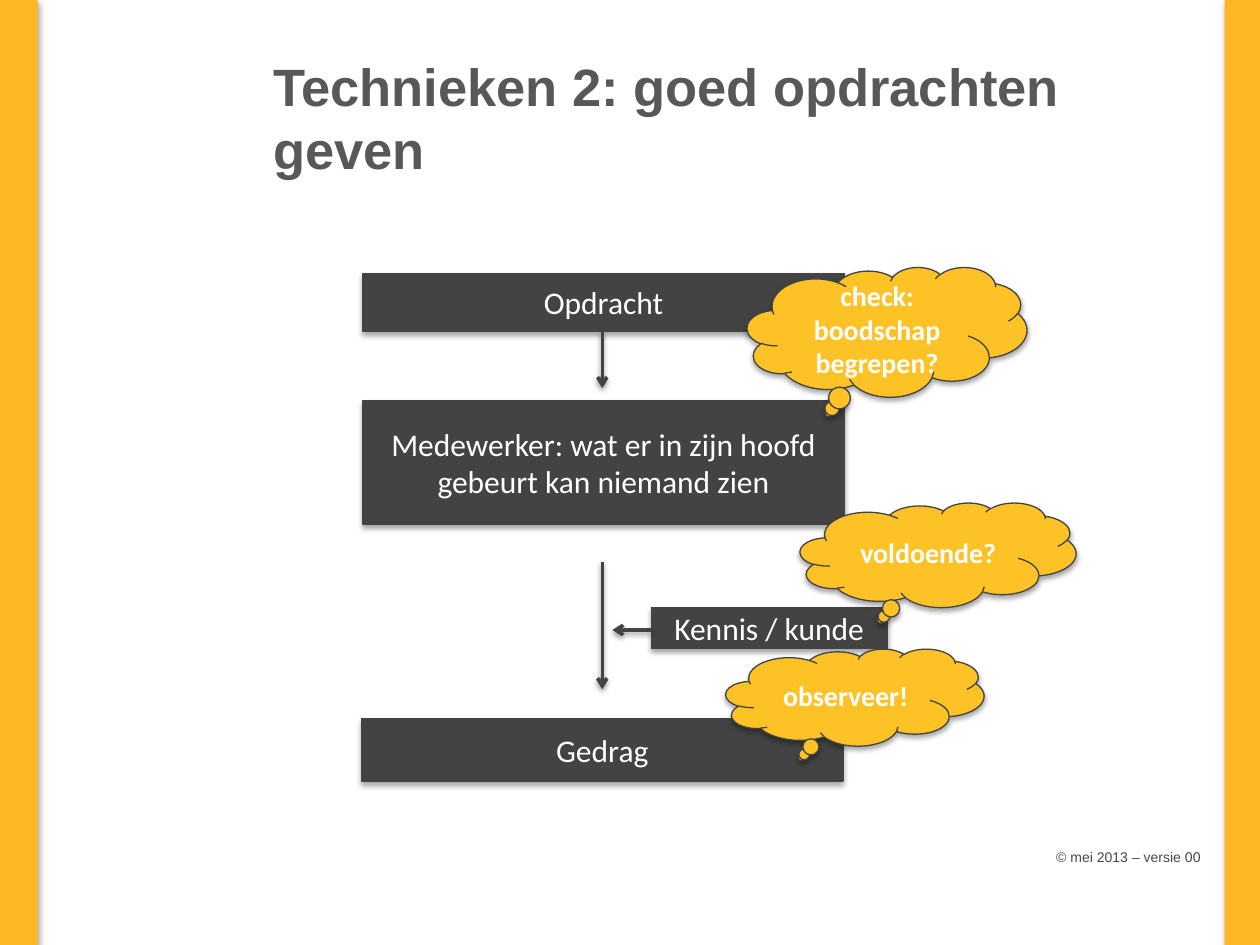
from dataclasses import dataclass

import pptx
import pptx.dml.color
import pptx.enum.shapes
import pptx.enum.text
import pptx.oxml
import pptx.oxml.ns
import pptx.util
from pptx.util import Inches

Kind = pptx.enum.shapes.MSO_SHAPE
Align = pptx.enum.text.PP_ALIGN
Anchor = pptx.enum.text.MSO_ANCHOR
DARK, WHITE, GOLD = "434343", "FFFFFF", "FDC225"


@dataclass
class Area:
    left: float
    top: float
    width: float
    height: float

    def spot(self) -> list:
        return [Inches(v) for v in (self.left, self.top, self.width, self.height)]


@dataclass
class Label:
    text: str
    size: int
    color: str
    font: str = "Calibri"
    bold: bool = False
    align: Align = Align.CENTER


@dataclass
class Arrow:
    start: tuple[float, float]
    end: tuple[float, float]


def paint(fmt, color: str) -> None:
    """Give a fill or a font one solid colour."""
    if hasattr(fmt, "solid"):
        fmt.solid()
        fmt.fore_color.rgb = pptx.dml.color.RGBColor.from_string(color)
    else:
        fmt.color.rgb = pptx.dml.color.RGBColor.from_string(color)


def node(xml: str):
    """Parse one element of the drawing namespace."""
    space = pptx.oxml.ns.nsdecls("a")
    return pptx.oxml.parse_xml(xml.replace(">", f" {space}>", 1))


def shade(item, alpha: int, dist: float) -> None:
    """Put a soft shadow straight below a shape or line."""
    props = item._element.spPr
    for old in props.findall(pptx.oxml.ns.qn("a:effectLst")):
        props.remove(old)
    props.append(node(
        f'<a:effectLst><a:outerShdw blurRad="{pptx.util.Pt(3.1)}" '
        f'dist="{pptx.util.Pt(dist)}" dir="5400000" rotWithShape="0">'
        f'<a:srgbClr val="000000"><a:alpha val="{alpha * 1000}"/></a:srgbClr>'
        "</a:outerShdw></a:effectLst>"))


def write(item, label: Label) -> None:
    frame = item.text_frame
    frame.word_wrap = True
    frame.vertical_anchor = Anchor.MIDDLE
    frame.text = label.text
    para = frame.paragraphs[0]
    para.alignment = label.align
    para.font.name = label.font
    para.font.size = pptx.util.Pt(label.size)
    para.font.bold = label.bold
    paint(para.font, label.color)


def block(slide, kind: Kind, area: Area, fill: str, label: Label | None = None) -> None:
    """Draw a filled shape, outlined when it holds a label."""
    item = slide.shapes.add_shape(kind, *area.spot())
    paint(item.fill, fill)
    if label:
        paint(item.line.fill, DARK)
        item.line.width = pptx.util.Pt(0.75)
        write(item, label)
    else:
        item.line.fill.background()
    shade(item, 35, 1.8)


def note(slide, area: Area, label: Label) -> None:
    write(slide.shapes.add_textbox(*area.spot()), label)


def link(slide, arrow: Arrow) -> None:
    ends = [Inches(v) for v in arrow.start + arrow.end]
    item = slide.shapes.add_connector(pptx.enum.shapes.MSO_CONNECTOR.STRAIGHT, *ends)
    paint(item.line.fill, DARK)
    item.line.width = pptx.util.Pt(2)
    item.line._get_or_add_ln().append(node('<a:tailEnd type="arrow"></a:tailEnd>'))
    shade(item, 38, 1.6)


STEPS = [
    (Area(2.88, 2.17, 3.82, 0.46), "Opdracht"),
    (Area(2.88, 3.18, 3.82, 0.98),
     "Medewerker: wat er in zijn hoofd gebeurt kan niemand zien"),
    (Area(2.87, 5.7, 3.82, 0.5), "Gedrag"),
    (Area(5.17, 4.82, 1.87, 0.33), "Kennis / kunde"),
]
CLOUDS = [
    (Area(6.35, 3.99, 2.19, 0.83), "voldoende?"),
    (Area(5.93, 2.12, 2.22, 1.03), "check: boodschap begrepen?"),
    (Area(5.76, 5.15, 2.05, 0.77), "observeer!"),
]
ARROWS = [
    Arrow((4.78, 2.63), (4.78, 3.08)),
    Arrow((4.78, 4.46), (4.78, 5.47)),
    Arrow((5.17, 5), (4.86, 5)),
]


def main() -> None:
    deck = pptx.Presentation()
    deck.slide_width, deck.slide_height = Inches(10), Inches(7.5)
    slide = deck.slides.add_slide(deck.slide_layouts[6])

    note(slide, Area(7.3, 6.6, 2.33, 0.4),
         Label("© mei 2013 – versie 00", 8, "464749", "Arial", align=Align.RIGHT))
    for left in (9.72, 0):
        block(slide, Kind.RECTANGLE, Area(left, 0, 0.3, 7.5), "FCB723")
    note(slide, Area(2.07, 0.3, 7.43, 1.25),
         Label("Technieken 2: goed opdrachten geven", 30, "585857", "Arial", True,
               Align.LEFT))

    for area, text in STEPS:
        block(slide, Kind.RECTANGLE, area, DARK, Label(text, 18, WHITE))
    for arrow in ARROWS:
        link(slide, arrow)
    for area, text in CLOUDS:
        block(slide, Kind.CLOUD_CALLOUT, area, GOLD, Label(text, 16, WHITE, bold=True))
    deck.save("out.pptx")


if __name__ == "__main__":
    main()
